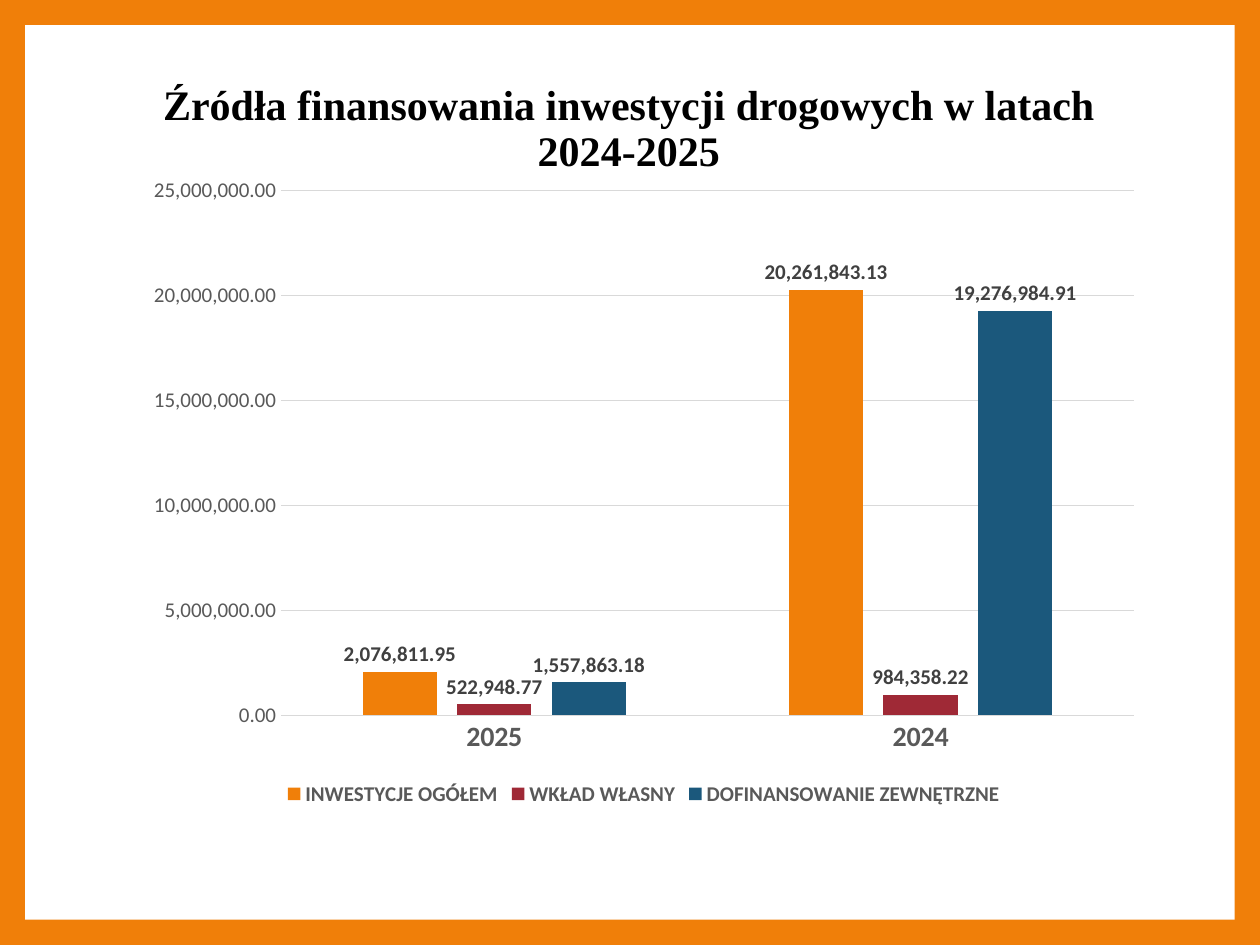
from pptx import Presentation
from pptx.chart.data import CategoryChartData
from pptx.dml.color import RGBColor
from pptx.enum.chart import XL_CHART_TYPE as Kind, XL_LABEL_POSITION as Spot
from pptx.enum.chart import XL_LEGEND_POSITION as Side, XL_TICK_MARK as Tick
from pptx.enum.shapes import MSO_SHAPE as Form
from pptx.enum.text import MSO_ANCHOR as Anchor, MSO_AUTO_SIZE as Fit, PP_ALIGN as Align
from pptx.util import Inches, Pt

TITLE = "Źródła finansowania inwestycji drogowych w latach 2024-2025"
YEARS = ["2025", "2024"]
SERIES = [
    ("INWESTYCJE OGÓŁEM", (2076811.95, 20261843.13), "F07F09"),
    ("WKŁAD WŁASNY", (522948.77, 984358.22), "9F2936"),
    ("DOFINANSOWANIE ZEWNĘTRZNE", (1557863.18, 19276984.91), "1B587C"),
]
MONEY = "#,##0.00"


def paint(fill, color):
    """Give a fill one solid colour."""
    fill.solid()
    fill.fore_color.rgb = RGBColor.from_string(color)


def style(font, size, color, bold=False, name="Calibri"):
    """Set the look of a font."""
    font.name, font.size, font.bold = name, Pt(size), bold
    font.color.rgb = RGBColor.from_string(color)


def rule(line):
    """Make a thin grey line."""
    paint(line.fill, "D9D9D9")
    line.width = Pt(0.75)


def place(shape, left, top, width, height):
    """Move and size a shape in inches."""
    shape.left, shape.top = Inches(left), Inches(top)
    shape.width, shape.height = Inches(width), Inches(height)


def add_panel(slide):
    """Lay the white panel behind the title."""
    box = [Inches(n) for n in (0.2, 0.2, 9.6, 7.1)]
    panel = slide.shapes.add_shape(Form.RECTANGLE, *box)
    panel.shadow.inherit = False
    paint(panel.fill, "FFFFFF")
    panel.line.fill.background()
    slide.shapes.title.element.addprevious(panel.element)


def set_title(slide):
    """Fill and format the title placeholder."""
    title = slide.shapes.title
    place(title, 0.94, 0.67, 8.1, 0.72)
    frame = title.text_frame
    frame.text = TITLE
    frame.word_wrap = True
    frame.auto_size = Fit.NONE
    frame.vertical_anchor = Anchor.MIDDLE
    para = frame.paragraphs[0]
    para.alignment, para.line_spacing = Align.CENTER, 0.9
    style(para.runs[0].font, 24, "000000", True, "Times New Roman")


def set_axes(chart):
    """Format both axes and the grid."""
    for axis in (chart.category_axis, chart.value_axis):
        axis.major_tick_mark = axis.minor_tick_mark = Tick.NONE
    style(chart.category_axis.tick_labels.font, 16, "595959", True)
    rule(chart.category_axis.format.line)
    value = chart.value_axis
    value.minimum_scale, value.maximum_scale = 0, 25000000
    value.major_unit = 5000000
    style(value.tick_labels.font, 12, "595959")
    value.tick_labels.number_format = MONEY
    value.tick_labels.number_format_is_linked = False
    value.format.line.fill.background()
    rule(value.major_gridlines.format.line)


def set_bars(plot):
    """Colour and label each series."""
    plot.gap_width, plot.overlap = 219, -27
    plot.vary_by_categories = False
    for bars, (_, _, color) in zip(plot.series, SERIES):
        paint(bars.format.fill, color)
        bars.invert_if_negative = False
        labels = bars.data_labels
        labels.show_value = True
        labels.position = Spot.OUTSIDE_END
        labels.number_format = MONEY
        labels.number_format_is_linked = False
        style(labels.font, 12, "404040", True)


def add_chart(slide):
    """Add the column chart of funding by year."""
    data = CategoryChartData(number_format=MONEY)
    data.categories = YEARS
    for name, vals, _ in SERIES:
        data.add_series(name, vals)
    box = [Inches(n) for n in (1.06, 1.31, 8.1, 5.13)]
    chart = slide.shapes.add_chart(Kind.COLUMN_CLUSTERED, *box, data).chart
    style(chart.font, 10, "000000")
    chart.has_title = False
    chart.has_legend = True
    chart.legend.position = Side.BOTTOM
    chart.legend.include_in_layout = False
    style(chart.legend.font, 12, "595959", True)
    set_axes(chart)
    set_bars(chart.plots[0])


def main():
    """Build the slide and save it."""
    deck = Presentation()
    deck.slide_width, deck.slide_height = Inches(10), Inches(7.5)
    slide = deck.slides.add_slide(deck.slide_layouts[5])
    paint(slide.background.fill, "F07F09")
    add_panel(slide)
    set_title(slide)
    add_chart(slide)
    deck.save("out.pptx")


if __name__ == "__main__":
    main()
